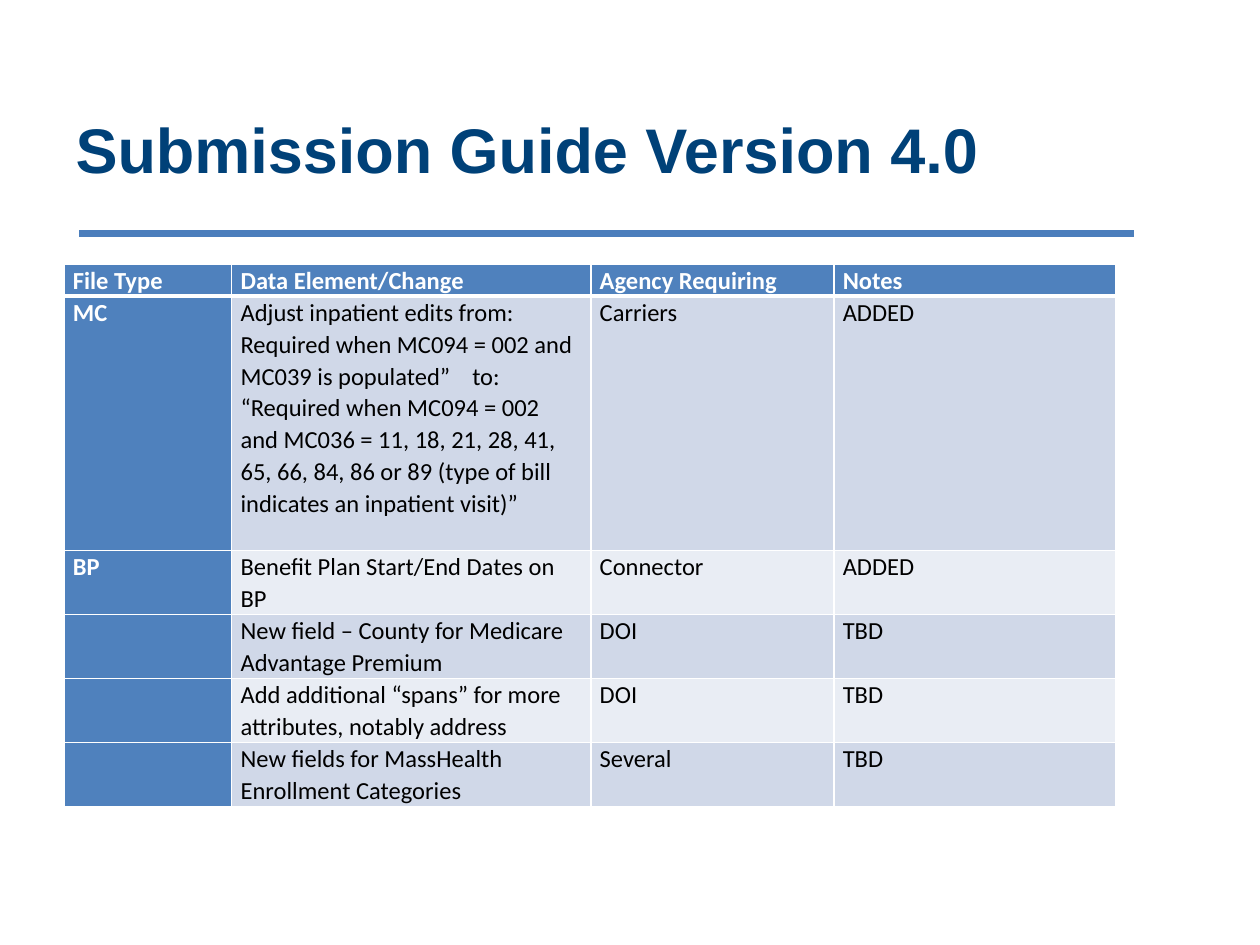
from lxml.etree import SubElement
from pptx import Presentation
from pptx.dml.color import RGBColor
from pptx.enum.shapes import MSO_CONNECTOR
from pptx.enum.text import MSO_ANCHOR, PP_ALIGN
from pptx.oxml.ns import qn
from pptx.util import Cm, Pt

BLUE, WHITE, BLACK = "4F81BD", "FFFFFF", "000000"
BANDS = ("D0D8E8", "E9EDF4")
HEAD = {"name": "Calibri", "size": Pt(14), "bold": True}
BODY = {**HEAD, "bold": False}
TITLE = {"name": "Arial", "size": Pt(36), "bold": True}
INSET = {"margin_left": Cm(0.18), "margin_right": Cm(0.18),
         "margin_top": 0, "margin_bottom": 0}
COLS = (3.38, 7.24, 4.9, 5.69)
TALL = (0.64, 5.13, 1.29, 1.29, 1.29, 1.29)
ROWS = (
    ("File Type", "Data Element/Change", "Agency Requiring", "Notes"),
    ("MC",
     "Adjust inpatient edits from: Required when MC094 = 002 and MC039 is "
     "populated”\tto: “Required when MC094 = 002 and MC036 = 11, 18, 21, 28, "
     "41, 65, 66, 84, 86 or 89 (type of bill indicates an inpatient visit)”",
     "Carriers", "ADDED"),
    ("BP", "Benefit Plan Start/End Dates on BP", "Connector", "ADDED"),
    ("", "New field – County for Medicare Advantage Premium", "DOI", "TBD"),
    ("", "Add additional “spans” for more attributes, notably address",
     "DOI", "TBD"),
    ("", "New fields for MassHealth Enrollment Categories", "Several", "TBD"),
)


def tint(code):
    """Return the colour of a hex string."""
    return RGBColor.from_string(code)


def style(item, form):
    """Set each format value on an item."""
    for key, val in form.items():
        setattr(item, key, val)


def write(para, text, form, code):
    """Add one formatted run to a paragraph."""
    run = para.add_run()
    run.text = text
    style(run.font, form)
    run.font.color.rgb = tint(code)


def add_tab(para, pos):
    """Add a left tab stop to a paragraph."""
    tabs = SubElement(para._p.get_or_add_pPr(), qn("a:tabLst"))
    SubElement(tabs, qn("a:tab"), pos=str(pos), algn="l")


def edge(cell, sides):
    """Draw white borders of the given widths round a cell."""
    props = cell._tc.get_or_add_tcPr()
    for side, width in sides.items():
        line = SubElement(props, qn(f"a:ln{side}"), w=str(Pt(width)))
        fill = SubElement(line, qn("a:solidFill"))
        SubElement(fill, qn("a:srgbClr"), val=WHITE)


def add_title(slide, text):
    """Place the slide title."""
    title = slide.shapes.title
    style(title, {"left": Cm(1.27), "top": Cm(1.57),
                  "width": Cm(21.59), "height": Cm(2.82)})
    title.text_frame.vertical_anchor = MSO_ANCHOR.MIDDLE
    para = title.text_frame.paragraphs[0]
    para.alignment = PP_ALIGN.LEFT
    write(para, text, TITLE, "004178")


def add_rule(slide):
    """Draw the line under the title."""
    rule = slide.shapes.add_connector(
        MSO_CONNECTOR.STRAIGHT, Cm(1.6), Cm(4.7), Cm(22.86), Cm(4.7))
    rule.line.color.rgb = tint("4B7EBC")
    rule.line.width = Pt(4)
    SubElement(rule._element.spPr, qn("a:effectLst"))


def fill_cell(cell, text, row, col):
    """Format one cell by its place in the table."""
    edge(cell, {"L": 1, "R": 1, "T": 3 if row == 1 else 1,
                "B": 3 if row == 0 else 1})
    head = row == 0 or col == 0
    cell.fill.solid()
    cell.fill.fore_color.rgb = tint(BLUE if head else BANDS[(row - 1) % 2])
    style(cell, INSET)
    para = cell.text_frame.paragraphs[0]
    para.line_spacing = 1.07
    if "\t" in text:
        add_tab(para, Cm(4.67))
    if text:
        write(para, text, HEAD if head else BODY, WHITE if head else BLACK)


def add_grid(slide):
    """Build the table of changes."""
    grid = slide.shapes.add_table(
        len(ROWS), len(COLS), Cm(1.29), Cm(5.32),
        Cm(sum(COLS)), Cm(sum(TALL))).table
    for col, width in zip(grid.columns, COLS):
        col.width = Cm(width)
    for row, height in zip(grid.rows, TALL):
        row.height = Cm(height)
    for row, texts in enumerate(ROWS):
        for col, text in enumerate(texts):
            fill_cell(grid.cell(row, col), text, row, col)


def main():
    """Build and save the deck."""
    deck = Presentation()
    style(deck, {"slide_width": Cm(25.4), "slide_height": Cm(19.05)})
    slide = deck.slides.add_slide(deck.slide_layouts[5])
    add_rule(slide)
    add_title(slide, "Submission Guide Version 4.0")
    add_grid(slide)
    deck.save("out.pptx")


if __name__ == "__main__":
    main()
